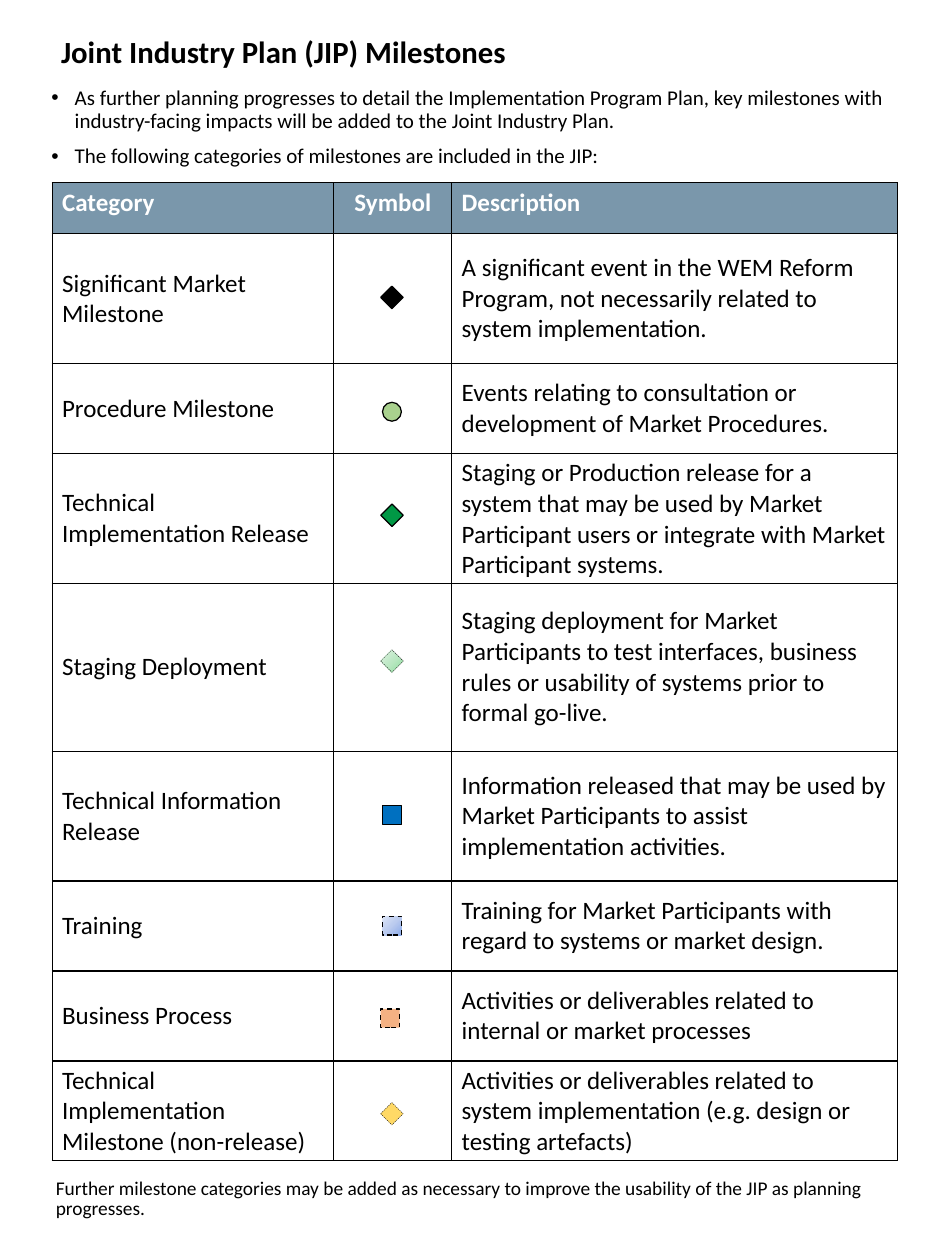
"""Build the Joint Industry Plan milestone legend slide."""
from pptx import Presentation
from pptx.dml.color import RGBColor
from pptx.enum import dml, shapes, text
from pptx.oxml import parse_xml
from pptx.oxml.ns import nsdecls, qn
from pptx.util import Inches, Pt

BLACK = RGBColor(0x00, 0x00, 0x00)
WHITE = RGBColor(0xFF, 0xFF, 0xFF)
SLATE = RGBColor(0x7A, 0x97, 0xAB)
GREEN = RGBColor(0x00, 0x98, 0x45)
LIGHT_GREEN = RGBColor(0xA9, 0xD1, 0x8E)
BLUE = RGBColor(0x00, 0x70, 0xC0)
ORANGE = RGBColor(0xF4, 0xB1, 0x83)
YELLOW = RGBColor(0xFF, 0xD9, 0x66)
GREEN_FADE = [RGBColor(0x91, 0xDE, 0xA0), RGBColor(0xBD, 0xE8, 0xC5), RGBColor(0xDF, 0xF3, 0xE3)]
BLUE_FADE = [RGBColor(0x8F, 0xAD, 0xE9), RGBColor(0xBC, 0xCC, 0xEF), RGBColor(0xDE, 0xE6, 0xF7)]

DIAMOND = shapes.MSO_SHAPE.FLOWCHART_DECISION
SQUARE = shapes.MSO_SHAPE.RECTANGLE
CIRCLE = shapes.MSO_SHAPE.OVAL
SYMBOL_SIZES = {DIAMOND: 0.25, SQUARE: 0.21, CIRCLE: 0.21}

COLUMN_WIDTHS = [3.13, 1.31, 4.95]
ROW_HEIGHTS = [0.57, 1.44, 1, 1.44, 1.87, 1.44, 1, 1, 1]
HEADINGS = ["Category", "Symbol", "Description"]
MILESTONES = [
    ("Significant Market Milestone",
     "A significant event in the WEM Reform Program, not necessarily related to system implementation."),
    ("Procedure Milestone",
     "Events relating to consultation or development of Market Procedures."),
    ("Technical Implementation Release",
     "Staging or Production release for a system that may be used by Market Participant users "
     "or integrate with Market Participant systems."),
    ("Staging Deployment",
     "Staging deployment for Market Participants to test interfaces, business rules or usability "
     "of systems prior to formal go-live."),
    ("Technical Information Release",
     "Information released that may be used by Market Participants to assist implementation activities."),
    ("Training",
     "Training for Market Participants with regard to systems or market design."),
    ("Business Process",
     "Activities or deliverables related to internal or market processes"),
    ("Technical Implementation Milestone (non-release)",
     "Activities or deliverables related to system implementation (e.g. design or testing artefacts)"),
]
SYMBOLS = [
    (DIAMOND, 4.23, 3.18, BLACK, 1, False),
    (CIRCLE, 4.25, 4.47, LIGHT_GREEN, 1, False),
    (DIAMOND, 4.23, 5.6, GREEN, 1, False),
    (DIAMOND, 4.23, 7.22, GREEN_FADE, 0.25, True),
    (SQUARE, 4.25, 8.95, BLUE, 1, False),
    (SQUARE, 4.25, 10.18, BLUE_FADE, 1, True),
    (SQUARE, 4.23, 11.21, ORANGE, 1, True),
    (DIAMOND, 4.23, 12.25, YELLOW, 0.25, True),
]
INTRODUCTION = [
    "As further planning progresses to detail the Implementation Program Plan, key milestones "
    "with industry-facing impacts will be added to the Joint Industry Plan.",
    "The following categories of milestones are included in the JIP:",
]
FOOTNOTE = ("Further milestone categories may be added as necessary to improve the usability "
            "of the JIP as planning progresses.")


def set_font(paragraph, size, color=BLACK, bold=False):
    """Give a paragraph its typeface, size, colour and weight."""
    font = paragraph.font
    font.name, font.size, font.bold = "Calibri", Pt(size), bold
    font.color.rgb = color


def add_bullet(paragraph):
    """Put a hanging bullet in front of a paragraph."""
    properties = paragraph._p.get_or_add_pPr()
    properties.set("marL", str(Inches(0.26)))
    properties.set("indent", str(Inches(-0.26)))
    properties.append(parse_xml(f'<a:buFont {nsdecls("a")} typeface="Arial"/>'))
    properties.append(parse_xml(f'<a:buChar {nsdecls("a")} char="•"/>'))


def add_text(slide, box, lines, size, spacing, inset=0.04, bold=False, bulleted=False,
             anchor=text.MSO_ANCHOR.TOP):
    """Add a wrapped text box with one paragraph for each line."""
    frame = slide.shapes.add_textbox(*map(Inches, box)).text_frame
    frame.word_wrap = True
    frame.vertical_anchor = anchor
    frame.margin_left = frame.margin_right = Inches(inset)
    frame.margin_top = frame.margin_bottom = Inches(0.04)
    for index, line in enumerate(lines):
        paragraph = frame.add_paragraph() if index else frame.paragraphs[0]
        paragraph.text = line
        if bulleted:
            add_bullet(paragraph)
        paragraph.line_spacing = spacing
        if index:
            paragraph.space_before = Pt(10.5)
        set_font(paragraph, size, bold=bold)


def add_borders(cell):
    """Draw a thin black line on all four sides of a cell."""
    properties = cell._tc.get_or_add_tcPr()
    for index, side in enumerate(["lnL", "lnR", "lnT", "lnB"]):
        properties.insert(index, parse_xml(
            f'<a:{side} {nsdecls("a")} w="{Pt(1)}"><a:solidFill>'
            f'<a:srgbClr val="{BLACK}"/></a:solidFill></a:{side}>'))


def fill_cell(cell, words, is_heading, centred):
    """Write and format one table cell."""
    cell.margin_left = cell.margin_right = Inches(0.11)
    cell.margin_top = cell.margin_bottom = Inches(0.05)
    if is_heading:
        cell.fill.solid()
        cell.fill.fore_color.rgb = SLATE
    else:
        cell.fill.background()
        cell.vertical_anchor = text.MSO_ANCHOR.MIDDLE
    add_borders(cell)
    paragraph = cell.text_frame.paragraphs[0]
    paragraph.text = words
    if centred:
        paragraph.alignment = text.PP_ALIGN.CENTER
    set_font(paragraph, 20, WHITE if is_heading else BLACK, is_heading)


def add_milestone_table(slide):
    """Add the table of milestone categories and descriptions."""
    rows = [HEADINGS] + [(category, "", description) for category, description in MILESTONES]
    table = slide.shapes.add_table(
        len(rows), len(HEADINGS), Inches(0.58), Inches(2.03),
        Inches(sum(COLUMN_WIDTHS)), Inches(sum(ROW_HEIGHTS))).table
    table.horz_banding = False
    for column, width in zip(table.columns, COLUMN_WIDTHS):
        column.width = Inches(width)
    for row, height in zip(table.rows, ROW_HEIGHTS):
        row.height = Inches(height)
    for row_index, row in enumerate(rows):
        for column_index, words in enumerate(row):
            fill_cell(table.cell(row_index, column_index), words, row_index == 0, column_index == 1)


def fade_from_corner(symbol, colors):
    """Fill a symbol with a circular gradient centred on its bottom right corner."""
    stops = "".join(f'<a:gs pos="{index * 50000}"><a:srgbClr val="{color}"/></a:gs>'
                    for index, color in enumerate(colors))
    gradient = parse_xml(
        f'<a:gradFill {nsdecls("a")} rotWithShape="1"><a:gsLst>{stops}</a:gsLst>'
        '<a:path path="circle"><a:fillToRect l="100000" t="100000"/></a:path></a:gradFill>')
    symbol.fill.background()
    properties = symbol._element.spPr
    properties.replace(properties.find(qn("a:noFill")), gradient)


def add_symbol(slide, preset, left, top, color, line_width, dashed):
    """Add one milestone symbol, filled plainly or with a gradient."""
    size = Inches(SYMBOL_SIZES[preset])
    symbol = slide.shapes.add_shape(preset, Inches(left), Inches(top), size, size)
    symbol.shadow.inherit = False
    if isinstance(color, RGBColor):
        symbol.fill.solid()
        symbol.fill.fore_color.rgb = color
    else:
        fade_from_corner(symbol, color)
    symbol.line.color.rgb = BLACK
    symbol.line.width = Pt(line_width)
    if dashed:
        symbol.line.dash_style = dml.MSO_LINE.DASH


def main():
    """Build and save the slide."""
    presentation = Presentation()
    presentation.slide_width, presentation.slide_height = Inches(10.5), Inches(14)
    slide = presentation.slides.add_slide(presentation.slide_layouts[6])
    add_text(slide, (0.58, 0.35, 9.05, 0.5), ["Joint Industry Plan (JIP) Milestones"], 24.6, 0.9,
             inset=0.1, bold=True, anchor=text.MSO_ANCHOR.MIDDLE)
    add_text(slide, (0.53, 0.93, 9.55, 1.1), INTRODUCTION, 16.8, 0.9, bulleted=True)
    add_milestone_table(slide)
    for symbol in SYMBOLS:
        add_symbol(slide, *symbol)
    add_text(slide, (0.58, 13.07, 9.5, 0.56), [FOOTNOTE], 15.5, 0.85)
    presentation.save("out.pptx")


if __name__ == "__main__":
    main()
